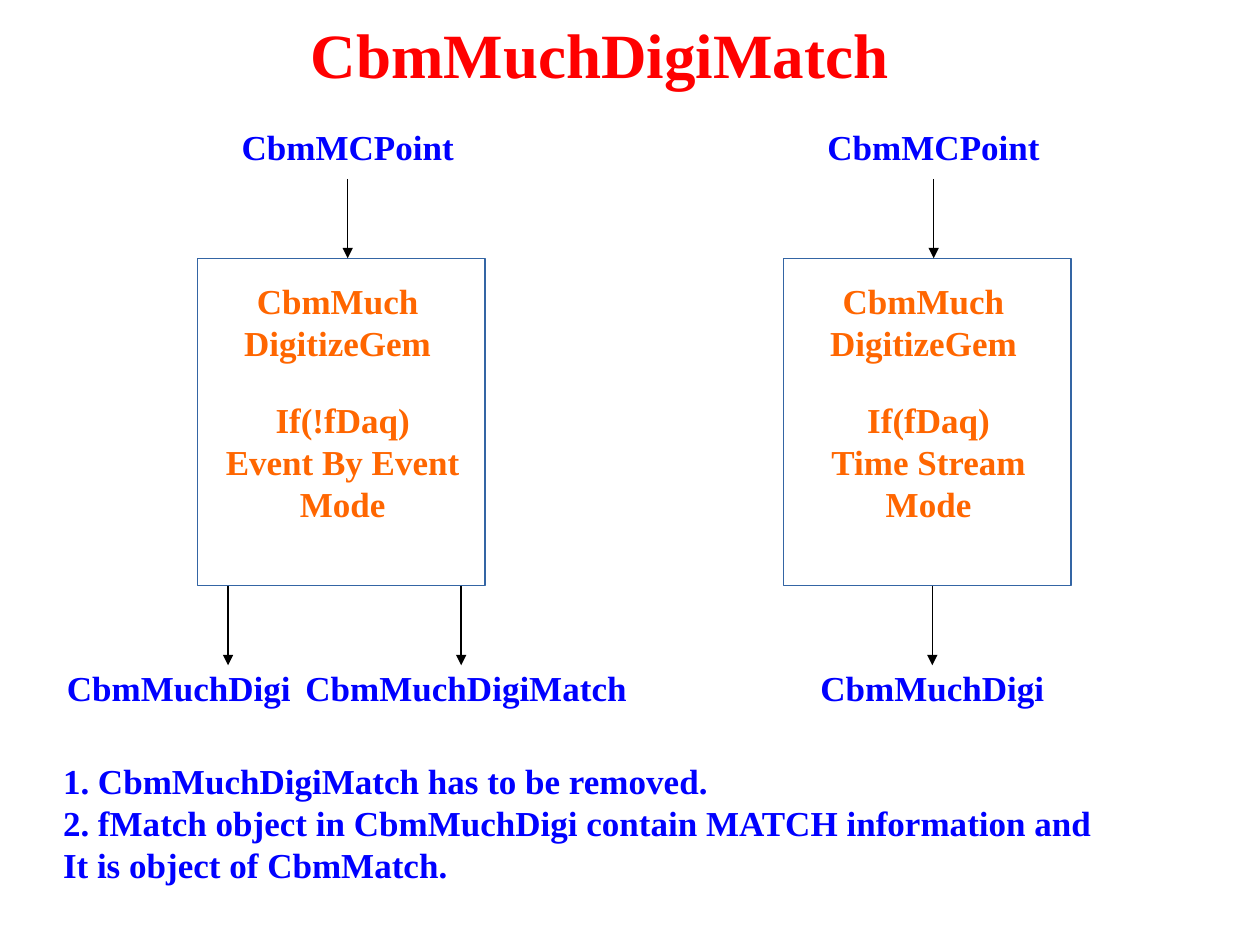
from lxml.etree import SubElement
from pptx import Presentation
from pptx.dml.color import RGBColor
from pptx.enum.shapes import MSO_CONNECTOR, MSO_SHAPE
from pptx.enum.text import MSO_ANCHOR, MSO_AUTO_SIZE, PP_ALIGN
from pptx.oxml.ns import qn
from pptx.util import Inches, Pt

RED = RGBColor(0xFF, 0x00, 0x00)
BLUE = RGBColor(0x00, 0x00, 0xFF)
ORANGE = RGBColor(0xFF, 0x66, 0x00)
BLACK = RGBColor(0x00, 0x00, 0x00)
OUTLINE = RGBColor(0x34, 0x65, 0xA4)
FONT = "Times New Roman"

# Content; output offsets are measured from the left edge of the box
TITLE = "CbmMuchDigiMatch"
SOURCE = ["CbmMCPoint"]
DIGITIZER = ["CbmMuch", "DigitizeGem"]
FLOWS = [
    {"left": 1.57,
     "mode": ["If(!fDaq)", "Event By Event", "Mode"],
     "outputs": [("CbmMuchDigi", 0.24, -0.15),  # name, arrow x, label centre
                 ("CbmMuchDigiMatch", 2.09, 2.13)]},
    {"left": 6.22,
     "mode": ["If(fDaq)", "Time Stream", "Mode"],
     "outputs": [("CbmMuchDigi", 1.18, 1.18)]},
]
NOTES = [
    "1. CbmMuchDigiMatch has to be removed.",
    "2. fMatch object in CbmMuchDigi contain MATCH information and",
    "It is object of CbmMatch.",
]

# Layout in inches
BOX_TOP, BOX_WIDTH, BOX_HEIGHT = 2.05, 2.28, 2.6
BOX_BOTTOM = BOX_TOP + BOX_HEIGHT
ARROW_LENGTH = 0.63
SOURCE_X, DIGITIZER_X, MODE_X = 1.19, 1.11, 1.15
LABEL_WIDTH = 2.76


def place(shape, left, top, width, height):
    shape.left, shape.top = Inches(left), Inches(top)
    shape.width, shape.height = Inches(width), Inches(height)


def write(shape, lines, size, color, align=PP_ALIGN.CENTER, wrap=False):
    frame = shape.text_frame
    frame.auto_size = MSO_AUTO_SIZE.NONE
    frame.word_wrap = wrap
    frame.vertical_anchor = MSO_ANCHOR.TOP
    for index, line in enumerate(lines):
        paragraph = frame.add_paragraph() if index else frame.paragraphs[0]
        paragraph.alignment = align
        paragraph.space_before = Pt(0)
        run = paragraph.add_run()
        run.text = line
        run.font.name = FONT
        run.font.size = Pt(size)
        run.font.bold = True
        run.font.color.rgb = color


def add_label(slide, lines, center, top, color):
    height = 0.1 + 0.33 * len(lines)
    label = slide.shapes.add_textbox(
        Inches(center - LABEL_WIDTH / 2), Inches(top), Inches(LABEL_WIDTH), Inches(height))
    write(label, lines, 20, color)


def add_down_arrow(slide, x, top):
    arrow = slide.shapes.add_connector(
        MSO_CONNECTOR.STRAIGHT, Inches(x), Inches(top), Inches(x), Inches(top + ARROW_LENGTH))
    arrow.line.color.rgb = BLACK
    arrow.line.width = Pt(0.75)
    SubElement(arrow.line._get_or_add_ln(), qn("a:tailEnd"), type="triangle")
    SubElement(arrow._element.spPr, qn("a:effectLst"))


def add_flow(slide, flow):
    left = flow["left"]
    box = slide.shapes.add_shape(
        MSO_SHAPE.RECTANGLE, Inches(left), Inches(BOX_TOP), Inches(BOX_WIDTH), Inches(BOX_HEIGHT))
    box.shadow.inherit = False
    box.fill.background()
    box.line.color.rgb = OUTLINE
    box.line.width = Pt(0.75)

    add_label(slide, SOURCE, left + SOURCE_X, 0.95, BLUE)
    add_down_arrow(slide, left + SOURCE_X, BOX_TOP - ARROW_LENGTH)
    add_label(slide, DIGITIZER, left + DIGITIZER_X, 2.17, ORANGE)
    add_label(slide, flow["mode"], left + MODE_X, 3.11, ORANGE)
    for name, arrow_x, label_x in flow["outputs"]:
        add_down_arrow(slide, left + arrow_x, BOX_BOTTOM)
        add_label(slide, [name], left + label_x, 5.24, BLUE)


def main():
    deck = Presentation()
    deck.slide_width, deck.slide_height = Inches(10), Inches(7.5)
    slide = deck.slides.add_slide(deck.slide_layouts[1])

    # Title, wide enough for one line
    place(slide.shapes.title, 2.26, 0.07, 5, 0.7)
    write(slide.shapes.title, [TITLE], 36, RED, wrap=True)

    # Two digitizer modes
    for flow in FLOWS:
        add_flow(slide, flow)

    # Notes below, flush left without bullets
    notes = slide.placeholders[1]
    place(notes, 0.4, 5.98, 8.5, 1.1)
    write(notes, NOTES, 20, BLUE, PP_ALIGN.LEFT, wrap=True)
    for paragraph in notes.text_frame.paragraphs:
        properties = paragraph._p.get_or_add_pPr()
        properties.set("marL", "0")
        properties.set("indent", "0")
        SubElement(properties, qn("a:buNone"))

    deck.save("out.pptx")


if __name__ == "__main__":
    main()
